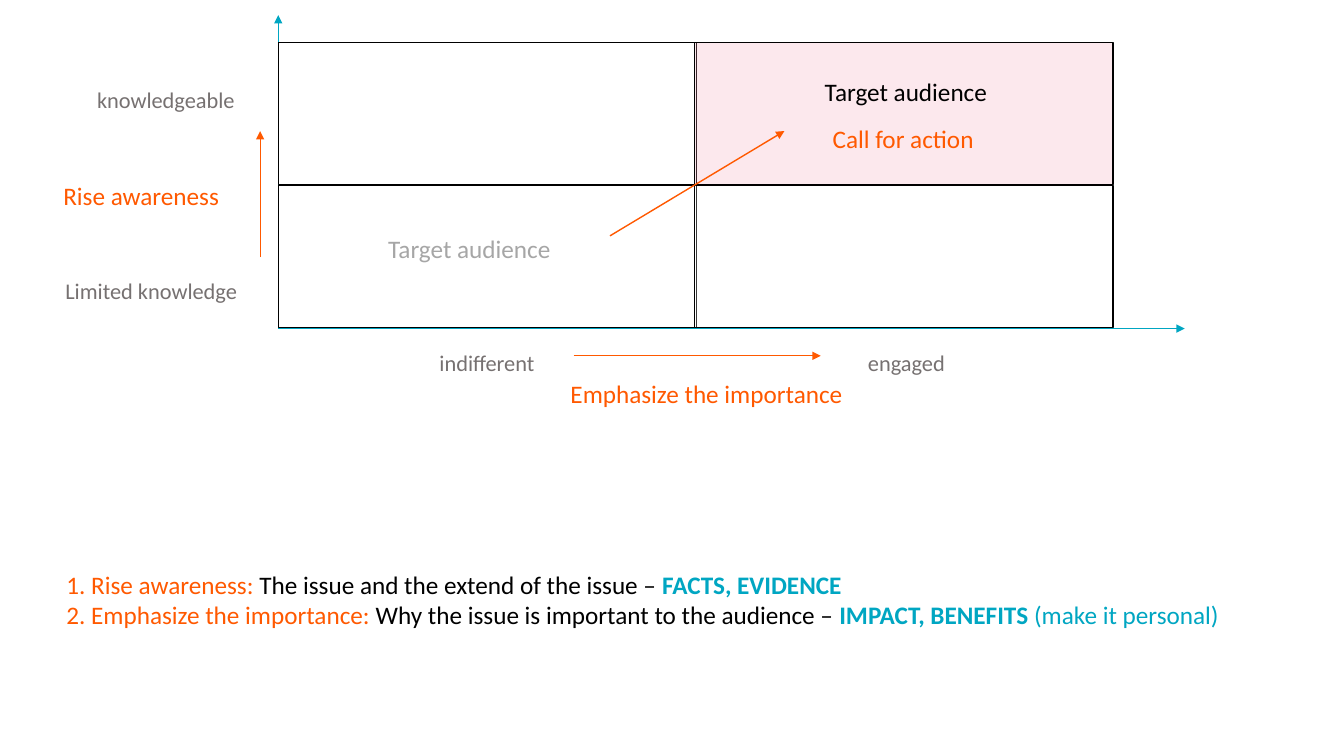
import pptx
import pptx.util
import pptx.dml.color
import pptx.enum.shapes
import pptx.enum.text
import pptx.oxml.ns
import pptx.oxml.xmlchemy
from dataclasses import dataclass


@dataclass(frozen=True)
class Theme:
    font: str = "Calibri"
    body: int = 18
    label: int = 16
    black: str = "000000"
    white: str = "FFFFFF"
    pink: str = "F69FB4"
    teal: str = "00A6C2"
    orange: str = "FF5900"
    gray: str = "767171"
    pale: str = "A6A6A6"
    line: float = 1
    thin: float = 0.5


T = Theme()
WIDTH, HEIGHT = 13.33, 7.5
LEFT, TOP = 2.76, 0.42
COL, ROW = 4.13, 1.42
CELL_W, CELL_H = 4.15, 1.41
BASE = TOP + 2 * ROW

AXES = [(LEFT, 0.15), (11.75, BASE)]
QUADRANTS = [
    (0, 1, T.white, 22),
    (0, 0, T.white, 22),
    (1, 0, T.pink, 24),
    (1, 1, T.white, 22),
]
AXIS_LABELS = [
    ("engaged", 8.27, BASE + 0.15, 1.44),
    ("indifferent", 4.11, BASE + 0.15, 1.44),
    ("Limited knowledge", 0.41, 2.7, 2.18),
    ("knowledgeable", 0.7, 0.81, 1.89),
]
AUDIENCES = [
    ("Target audience", 7.43, 0.71, T.black),
    ("Target audience", 3.1, 2.27, T.pale),
]
ACTIONS = [
    ("Rise awareness", 0.53, 1.74, 1.76, False),
    ("Emphasize the importance", 5.56, 3.7, 2.93, False),
    ("Call for action", 8.16, 1.17, 2.03, True),
]
MOVES = [
    ((2.58, 2.55), (2.58, 1.3), T.thin),
    ((5.69, 3.53), (8.14, 3.53), T.thin),
    ((6.05, 2.34), (7.78, 1.3), T.line),
]
STEPS = [
    [("1. Rise awareness: ", T.orange, False),
     ("The issue and the extend of the issue – ", T.black, False),
     ("FACTS, EVIDENCE", T.teal, True)],
    [("2. Emphasize the importance: ", T.orange, False),
     ("Why the issue is important to the audience – ", T.black, False),
     ("IMPACT, BENEFITS ", T.teal, True),
     ("(make it personal)", T.teal, False)],
]


def rgb(value):
    return pptx.dml.color.RGBColor.from_string(value)


def inches(*values):
    return [pptx.util.Inches(v) for v in values]


def add_element(parent, tag, **attributes):
    element = pptx.oxml.xmlchemy.OxmlElement(tag)
    for name, value in attributes.items():
        element.set(name, value)
    parent.append(element)


def add_text(slide, paragraphs, x, y, w, h=0.4, size=T.body, center=False, wrap=True):
    tf = slide.shapes.add_textbox(*inches(x, y, w, h)).text_frame
    tf.word_wrap = wrap
    tf.auto_size = pptx.enum.text.MSO_AUTO_SIZE.SHAPE_TO_FIT_TEXT
    for i, runs in enumerate(paragraphs):
        p = tf.add_paragraph() if i else tf.paragraphs[0]
        p.alignment = pptx.enum.text.PP_ALIGN.CENTER if center else pptx.enum.text.PP_ALIGN.LEFT
        for text, color, bold in runs:
            r = p.add_run()
            r.text = text
            r.font.name = T.font
            r.font.size = pptx.util.Pt(size)
            r.font.bold = bold
            r.font.color.rgb = rgb(color)


def add_arrow(slide, start, end, color, width):
    c = slide.shapes.add_connector(
        pptx.enum.shapes.MSO_CONNECTOR.STRAIGHT, *inches(*start, *end))
    c.line.color.rgb = rgb(color)
    c.line.width = pptx.util.Pt(width)
    props = c._element.spPr
    add_element(props.find(pptx.oxml.ns.qn("a:ln")), "a:tailEnd", type="triangle")
    add_element(props, "a:effectLst")


def add_quadrant(slide, col, row, color, opacity):
    sp = slide.shapes.add_shape(
        pptx.enum.shapes.MSO_SHAPE.RECTANGLE,
        *inches(LEFT + col * COL, TOP + row * ROW, CELL_W, CELL_H))
    sp.shadow.inherit = False
    sp.fill.solid()
    sp.fill.fore_color.rgb = rgb(color)
    fill = sp._element.spPr.find(pptx.oxml.ns.qn("a:solidFill"))
    add_element(fill[0], "a:alpha", val=str(opacity * 1000))
    sp.line.color.rgb = rgb(T.black)
    sp.line.width = pptx.util.Pt(T.line)


def main():
    prs = pptx.Presentation()
    prs.slide_width, prs.slide_height = inches(WIDTH, HEIGHT)
    slide = prs.slides.add_slide(prs.slide_layouts[6])

    for end in AXES:
        add_arrow(slide, (LEFT, BASE), end, T.teal, T.line)
    for quadrant in QUADRANTS:
        add_quadrant(slide, *quadrant)
    for text, x, y, w in AXIS_LABELS:
        add_text(slide, [[(text, T.gray, False)]], x, y, w, size=T.label, center=True)
    for text, x, y, color in AUDIENCES:
        add_text(slide, [[(text, color, False)]], x, y, 3.11, center=True)
    for text, x, y, w, wrap in ACTIONS:
        add_text(slide, [[(text, T.orange, False)]], x, y, w, wrap=wrap)
    for start, end, width in MOVES:
        add_arrow(slide, start, end, T.orange, width)
    add_text(slide, STEPS, 0.56, 5.6, 12.2, h=0.71)

    prs.save("out.pptx")


if __name__ == "__main__":
    main()
